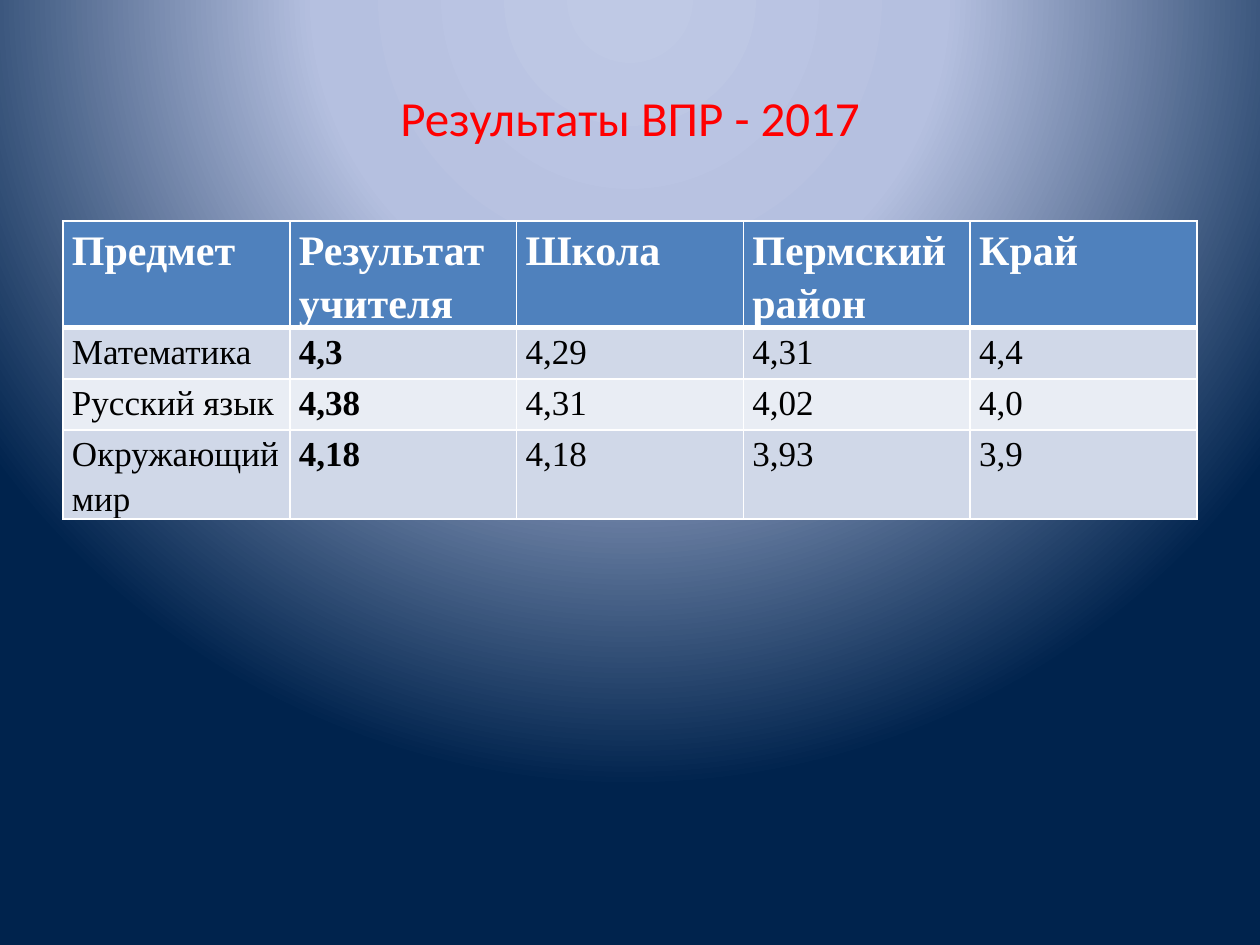
from dataclasses import dataclass

from pptx import Presentation
from pptx.dml.color import RGBColor
from pptx.enum.text import MSO_ANCHOR as Anchor, PP_ALIGN as Align
from pptx.oxml import parse_xml
from pptx.oxml.ns import nsdecls
from pptx.slide import Slide
from pptx.table import _Cell as Cell
from pptx.text.text import _Paragraph as Paragraph
from pptx.util import Emu, Pt

EMU_PER_PX = 914400 / 126
RED = RGBColor(0xFF, 0x00, 0x00)
WHITE = RGBColor(0xFF, 0xFF, 0xFF)
BLACK = RGBColor(0x00, 0x00, 0x00)
HEADER_BLUE = RGBColor(0x4F, 0x81, 0xBD)
BAND_DARK = RGBColor(0xD0, 0xD8, 0xE8)
BAND_LIGHT = RGBColor(0xE9, 0xED, 0xF4)
GLOW = RGBColor(0xBF, 0xC9, 0xE5)
HALO = RGBColor(0xB5, 0xC0, 0xE0)
NIGHT = RGBColor(0x00, 0x23, 0x4D)
BACKGROUND_STOPS = ((0, GLOW), (40, HALO), (100, NIGHT))
ROW_HEIGHT = 51
HEADINGS = ("Предмет", "Результат учителя", "Школа", "Пермский район", "Край")


@dataclass(frozen=True)
class TextStyle:
    font: str
    size: int
    color: RGBColor
    bold: bool = False


@dataclass(frozen=True)
class Subject:
    name: str
    teacher: str
    school: str
    district: str
    region: str

    def values(self) -> tuple[str, ...]:
        return self.name, self.teacher, self.school, self.district, self.region


TITLE = TextStyle("Calibri", 28, RED)
HEADING = TextStyle("Times New Roman", 24, WHITE, True)
SCORE = TextStyle("Times New Roman", 20, BLACK)
TEACHER_SCORE = TextStyle("Times New Roman", 20, BLACK, True)
SUBJECTS = (
    Subject("Математика", "4,3", "4,29", "4,31", "4,4"),
    Subject("Русский язык", "4,38", "4,31", "4,02", "4,0"),
    Subject("Окружающий мир", "4,18", "4,18", "3,93", "3,9"),
)


def px(length: int) -> Emu:
    return Emu(round(length * EMU_PER_PX))


def add_run(paragraph: Paragraph, text: str, style: TextStyle) -> None:
    run = paragraph.add_run()
    run.text = text
    run.font.name = style.font
    run.font.size = Pt(style.size)
    run.font.bold = style.bold
    run.font.color.rgb = style.color


def paint_background(slide: Slide) -> None:
    stops = "".join(
        f'<a:gs pos="{percent * 1000}"><a:srgbClr val="{color}"/></a:gs>'
        for percent, color in BACKGROUND_STOPS
    )
    background = parse_xml(
        f'<p:bg {nsdecls("p", "a")}><p:bgPr><a:gradFill rotWithShape="1">'
        f'<a:gsLst>{stops}</a:gsLst><a:path path="circle">'
        '<a:fillToRect l="50000" t="-80000" r="50000" b="180000"/></a:path>'
        "</a:gradFill><a:effectLst/></p:bgPr></p:bg>"
    )
    slide.element.cSld.insert(0, background)


def set_borders(cell: Cell, top: int, bottom: int) -> None:
    properties = cell._tc.get_or_add_tcPr()
    widths = {"lnL": 1, "lnR": 1, "lnT": top, "lnB": bottom}
    for position, (side, width) in enumerate(widths.items()):
        properties.insert(position, parse_xml(
            f'<a:{side} {nsdecls("a")} w="{Pt(width)}"><a:solidFill>'
            f'<a:srgbClr val="{WHITE}"/></a:solidFill></a:{side}>'
        ))


def fill_cell(cell: Cell, text: str, style: TextStyle, fill: RGBColor) -> None:
    cell.fill.solid()
    cell.fill.fore_color.rgb = fill
    cell.margin_left = cell.margin_right = px(9)
    cell.margin_top = cell.margin_bottom = px(0)
    paragraph = cell.text_frame.paragraphs[0]
    paragraph.line_spacing = 1.15
    paragraph.space_after = Pt(10)
    add_run(paragraph, text, style)


def add_title(slide: Slide, text: str) -> None:
    title = slide.shapes.title
    title.left, title.top, title.width, title.height = map(px, (63, 38, 1134, 157))
    title.text_frame.vertical_anchor = Anchor.MIDDLE
    paragraph = title.text_frame.paragraphs[0]
    paragraph.alignment = Align.CENTER
    add_run(paragraph, text, TITLE)


def add_results(slide: Slide) -> None:
    row_count = len(SUBJECTS) + 1
    results = slide.shapes.add_table(
        row_count, len(HEADINGS), px(63), px(221), px(1134), px(ROW_HEIGHT * row_count)
    ).table
    for column, heading in enumerate(HEADINGS):
        cell = results.cell(0, column)
        fill_cell(cell, heading, HEADING, HEADER_BLUE)
        set_borders(cell, top=1, bottom=3)
    for row, subject in enumerate(SUBJECTS, start=1):
        band = BAND_DARK if row % 2 else BAND_LIGHT
        for column, value in enumerate(subject.values()):
            cell = results.cell(row, column)
            fill_cell(cell, value, TEACHER_SCORE if column == 1 else SCORE, band)
            set_borders(cell, top=3 if row == 1 else 1, bottom=1)


def main() -> None:
    """Build the slide with the test results table."""
    presentation = Presentation()
    presentation.slide_width, presentation.slide_height = px(1260), px(945)
    slide = presentation.slides.add_slide(presentation.slide_layouts[5])
    paint_background(slide)
    add_title(slide, "Результаты ВПР - 2017")
    add_results(slide)
    presentation.save("out.pptx")


if __name__ == "__main__":
    main()
